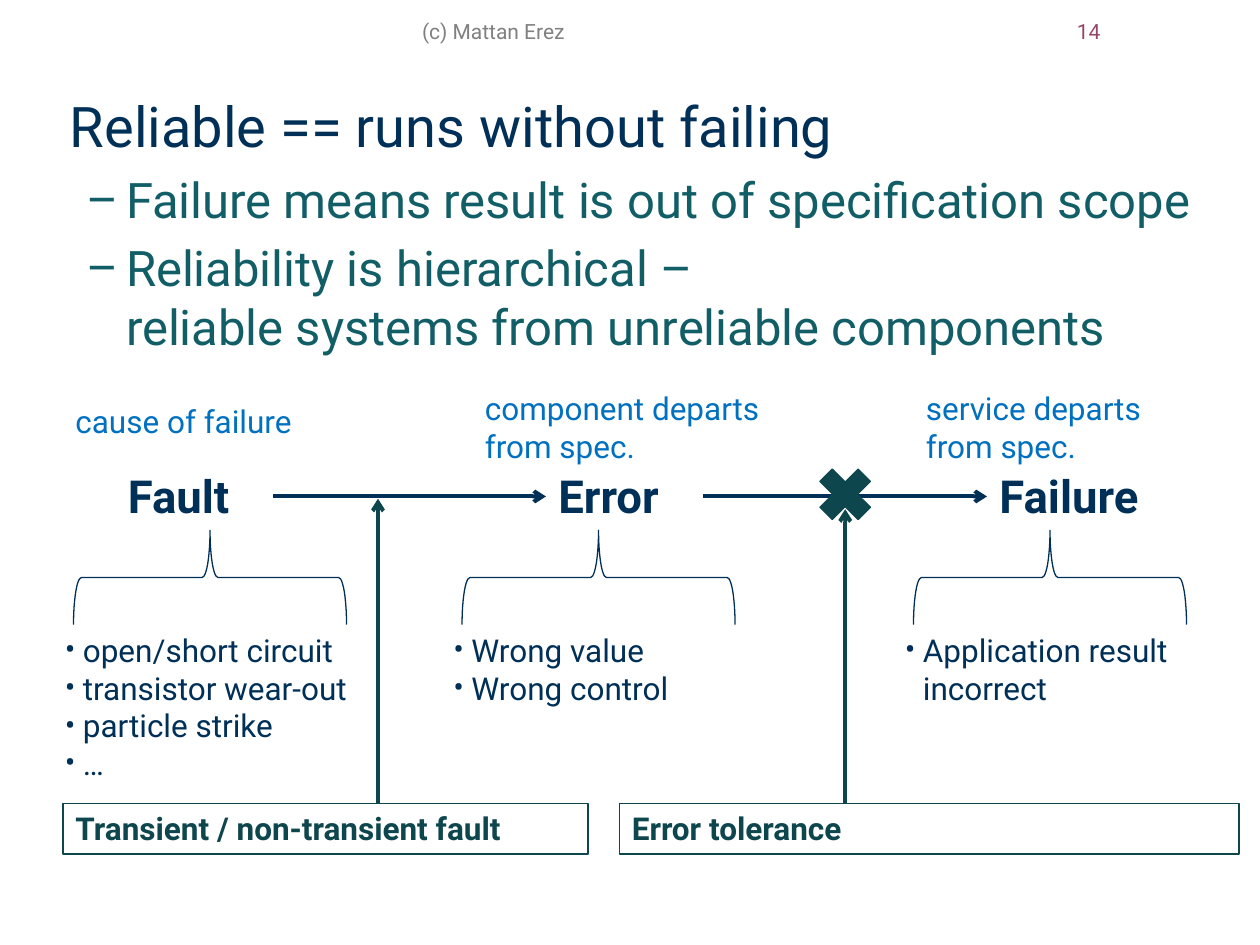
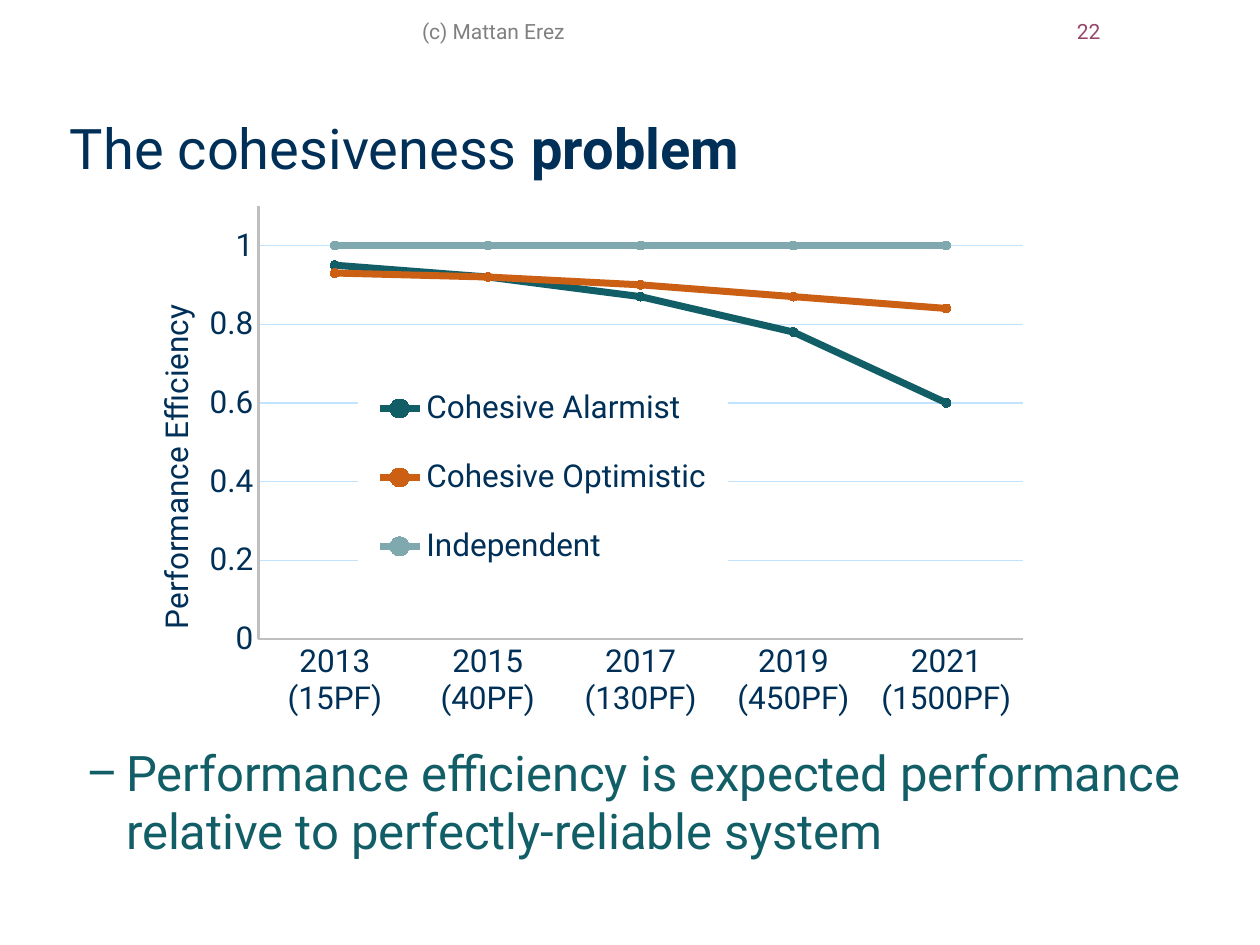
from lxml import etree
from pptx import Presentation
from pptx.chart import data
from pptx.dml.color import RGBColor
from pptx.enum import chart as ch, shapes, text
from pptx.oxml import ns
from pptx.util import Pt

FONT = "Roboto"
NAVY = RGBColor(0x00, 0x30, 0x57)
TEAL = RGBColor(0x11, 0x5E, 0x67)
DARK_TEAL = RGBColor(0x0D, 0x46, 0x4D)
PALE_TEAL = RGBColor(0x7F, 0xA9, 0xAE)
ORANGE = RGBColor(0xCB, 0x60, 0x15)
BLUE = RGBColor(0x00, 0x70, 0xC0)
PLUM = RGBColor(0x94, 0x47, 0x6B)
GREY = RGBColor(0x80, 0x80, 0x80)
AXIS_GREY = RGBColor(0xBF, 0xBF, 0xBF)
GRID_BLUE = RGBColor(0xC0, 0xE3, 0xFF)
WHITE = RGBColor(0xFF, 0xFF, 0xFF)


def sub(parent, tag, **attrs):
    el = etree.SubElement(parent, ns.qn(tag))
    for key, value in attrs.items():
        el.set(key, str(value))
    return el


# ---- Text ----
def set_font(font, size, color, bold=False):
    font.name = FONT
    font.size = Pt(size)
    font.bold = bold
    font.color.rgb = color


def add_run(p, words, size, color, bold=False):
    """Add the words to p, with a line break at each newline."""
    for i, line in enumerate(words.split("\n")):
        if i:
            p.add_line_break()
        r = p.add_run()
        r.text = line
        set_font(r.font, size, color, bold)


def set_bullet(p, char, left, hanging):
    pPr = p._p.get_or_add_pPr()
    pPr.set("marL", str(Pt(left)))
    pPr.set("indent", str(-Pt(hanging)))
    sub(pPr, "a:buFont", typeface=FONT)
    sub(pPr, "a:buChar", char=char)


def next_paragraph(tf):
    """The first paragraph while it is empty, then new ones."""
    return tf.add_paragraph() if tf.paragraphs[0].runs else tf.paragraphs[0]


def add_box(s, x, y, w, h):
    tf = s.shapes.add_textbox(Pt(x), Pt(y), Pt(w), Pt(h)).text_frame
    tf.word_wrap = True
    return tf


def add_label(s, x, y, w, h, words, size, color, bold=False):
    tf = add_box(s, x, y, w, h)
    add_run(tf.paragraphs[0], words, size, color, bold)
    return tf


def add_examples(s, x, y, w, items):
    tf = add_box(s, x, y, w, 7.2 + 21.8 * len(items))
    for item in items:
        p = next_paragraph(tf)
        set_bullet(p, "•", 10.3, 10.3)
        add_run(p, item, 18, NAVY)


def add_body(s, top, title_runs, points, gap=6):
    """Title line and dashed points; gap separates title from points."""
    tf = add_box(s, 36, top, 672, 504 - top)
    tf.margin_left = tf.margin_right = tf.margin_top = tf.margin_bottom = 0
    p = tf.paragraphs[0]
    p._p.get_or_add_pPr().set("marL", str(Pt(4)))
    p.line_spacing = 0.99
    for words, bold in title_runs:
        add_run(p, words, 32, NAVY, bold)
    for i, point in enumerate(points):
        p = tf.add_paragraph()
        set_bullet(p, "–", 36, 22.3)
        p.line_spacing = 0.99
        p.space_before = Pt(6 if i else gap)
        add_run(p, point, 28, TEAL)


def add_header(s, number):
    for x, w, words, color, align in (
            (66, 432, "(c) Mattan Erez", GREY, text.PP_ALIGN.CENTER),
            (570, 66, number, PLUM, text.PP_ALIGN.RIGHT)):
        tf = add_label(s, x, 0, w, 36, words, 12, color)
        tf.vertical_anchor = text.MSO_ANCHOR.MIDDLE
        tf.paragraphs[0].alignment = align


# ---- Shapes ----
def add_shape(s, kind, x, y, w, h, color, filled=False):
    sp = s.shapes.add_shape(kind, Pt(x), Pt(y), Pt(w), Pt(h))
    sp.shadow.inherit = False
    if filled:
        sp.fill.solid()
        sp.fill.fore_color.rgb = color
    else:
        sp.fill.background()
    sp.line.color.rgb = color
    sp.line.width = Pt(0.75)
    return sp


def add_arrow(s, x1, y1, x2, y2, color):
    line = s.shapes.add_connector(shapes.MSO_CONNECTOR.STRAIGHT,
                                  Pt(x1), Pt(y1), Pt(x2), Pt(y2))
    line.line.color.rgb = color
    line.line.width = Pt(2.25)
    sub(line.line._get_or_add_ln(), "a:tailEnd", type="arrow")
    sub(line._element.spPr, "a:effectLst")


def add_brace(s, x):
    """Brace 156 wide that opens downwards."""
    sp = add_shape(s, shapes.MSO_SHAPE.LEFT_BRACE, x, 252, 54, 156, NAVY)
    sp.rotation = 90


def add_callout(s, x, w, words, arrow_x, arrow_end):
    sp = add_shape(s, shapes.MSO_SHAPE.RECTANGLE, x, 459, w, 29, DARK_TEAL)
    tf = sp.text_frame
    tf.vertical_anchor = text.MSO_ANCHOR.TOP
    p = tf.paragraphs[0]
    p.alignment = text.PP_ALIGN.LEFT
    add_run(p, words, 18, DARK_TEAL, True)
    add_arrow(s, arrow_x, 459, arrow_x, arrow_end, DARK_TEAL)


# ---- Chart ----
def set_layout(parent, index, x, y, w=None, h=None, inner=False):
    """Place a chart part by fractions of the chart area."""
    for old in parent.findall(ns.qn("c:layout")):
        parent.remove(old)
    layout = etree.Element(ns.qn("c:layout"))
    manual = sub(layout, "c:manualLayout")
    if inner:
        sub(manual, "c:layoutTarget", val="inner")
    for tag in ("c:xMode", "c:yMode"):
        sub(manual, tag, val="edge")
    for tag, value in zip(("c:x", "c:y", "c:w", "c:h"), (x, y, w, h)):
        if value is not None:
            sub(manual, tag, val=value)
    parent.insert(index, layout)


def style_axis(axis, width):
    axis.major_tick_mark = axis.minor_tick_mark = ch.XL_TICK_MARK.NONE
    set_font(axis.tick_labels.font, 18, NAVY)
    axis.format.line.color.rgb = AXIS_GREY
    axis.format.line.width = Pt(width)


def style_value_axis(axis, title):
    style_axis(axis, 2)
    axis.minimum_scale, axis.maximum_scale, axis.major_unit = 0, 1.1, 0.2
    axis.has_major_gridlines = True
    grid = axis.major_gridlines.format.line
    grid.color.rgb = GRID_BLUE
    grid.width = Pt(0.75)
    add_run(axis.axis_title.text_frame.paragraphs[0], title, 18, NAVY)
    set_layout(axis.axis_title._element, 1, 0.018, 0.208)


def style_legend(chart):
    chart.has_legend = True
    legend = chart.legend
    legend.position = ch.XL_LEGEND_POSITION.RIGHT
    legend.include_in_layout = False
    set_font(legend.font, 18, NAVY)
    el = legend._element
    set_layout(el, 1, 0.248, 0.309, 0.409, 0.41)
    spPr = etree.Element(ns.qn("c:spPr"))
    sub(sub(spPr, "a:solidFill"), "a:srgbClr", val=WHITE)
    el.find(ns.qn("c:overlay")).addnext(spPr)


def add_efficiency_chart(s, cats, series):
    cd = data.CategoryChartData()
    cd.categories = cats
    for name, values, _ in series:
        cd.add_series(name, values)
    chart = s.shapes.add_chart(ch.XL_CHART_TYPE.LINE_MARKERS, Pt(76.3),
                               Pt(101.5), Pt(517), Pt(333.4), cd).chart
    chart.has_title = False
    set_font(chart.font, 18, NAVY)
    style_axis(chart.category_axis, 1.5)
    style_value_axis(chart.value_axis, "Performance Efficiency")
    style_legend(chart)
    plot_area = chart.element.find(".//" + ns.qn("c:plotArea"))
    set_layout(plot_area, 0, 0.138, 0.049, 0.845, 0.742, inner=True)
    chart.plots[0].vary_by_categories = False
    for ser, (_, _, color) in zip(chart.plots[0].series, series):
        ser.smooth = False
        ser.format.line.color.rgb = color
        ser.format.line.width = Pt(4)
        marker = ser.marker
        marker.style = ch.XL_MARKER_STYLE.CIRCLE
        marker.size = 5
        marker.format.fill.solid()
        marker.format.fill.fore_color.rgb = color
        marker.format.line.color.rgb = color


# ---- Slides ----
def reliability_slide(s):
    add_body(s, 54, [("Reliable == runs without failing", False)],
             ["Failure means result is out of specification scope",
              "Reliability is hierarchical –\n"
              "reliable systems from unreliable components"])
    add_header(s, "14")
    # Stage: name, left and width; meaning, left, top, width, height;
    # brace left; examples left, width, items
    stages = [
        ("Fault", 66, 90, "cause of failure", 36, 226, 156, 29, 93,
         30, 186, ["open/short circuit", "transistor wear-out",
                   "particle strike", "…"]),
        ("Error", 312, 90, "component departs from spec.",
         270, 219, 186, 51, 315, 252, 222, ["Wrong value", "Wrong control"]),
        ("Failure", 564, 114, "service departs from spec.",
         522, 219, 156, 51, 573, 510, 222, ["Application result\nincorrect"]),
    ]
    for name, x, w, meaning, mx, my, mw, mh, brace_x, ex, ew, items in stages:
        add_label(s, x, 264, w, 39, name, 26, NAVY, True)
        add_label(s, mx, my, mw, mh, meaning, 18, BLUE)
        add_brace(s, brace_x)
        add_examples(s, ex, 357, ew, items)
    for stage, following in zip(stages, stages[1:]):
        add_arrow(s, stage[1] + stage[2], 283.7, following[1], 283.7, NAVY)
    # Callouts on the two transitions
    add_callout(s, 36, 300, "Transient / non-transient fault", 216, 285)
    add_callout(s, 354, 354, "Error tolerance", 483, 291)
    add_shape(s, shapes.MSO_SHAPE.MATH_MULTIPLY, 462, 261.5, 42, 42,
              DARK_TEAL, filled=True)


def cohesiveness_slide(s):
    add_body(s, 66.5, [("The cohesiveness ", False), ("problem", True)],
             ["Performance efficiency is expected performance "
              "relative to perfectly-reliable system"], gap=321)
    add_efficiency_chart(
        s,
        ["2013\n(15PF)", "2015\n(40PF)", "2017\n(130PF)", "2019\n(450PF)",
         "2021\n(1500PF)"],
        [("Cohesive Alarmist", (0.95, 0.92, 0.87, 0.78, 0.6), TEAL),
         ("Cohesive Optimistic", (0.93, 0.92, 0.9, 0.87, 0.84), ORANGE),
         ("Independent", (1, 1, 1, 1, 1), PALE_TEAL)])
    add_header(s, "22")


def main():
    prs = Presentation()
    prs.slide_width, prs.slide_height = Pt(720), Pt(540)
    for build in (reliability_slide, cohesiveness_slide):
        build(prs.slides.add_slide(prs.slide_layouts[6]))
    prs.save("out.pptx")


if __name__ == "__main__":
    main()
